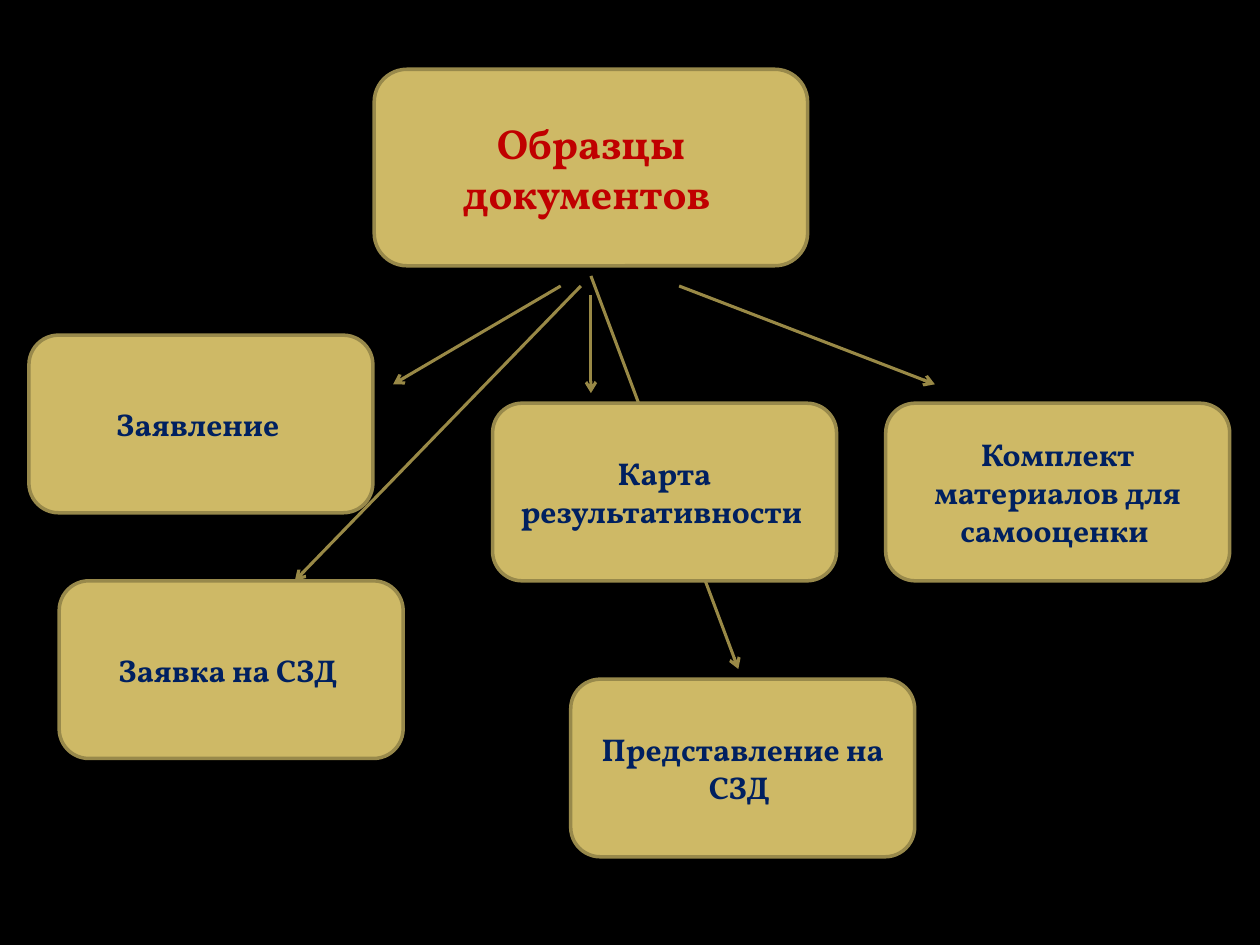
from lxml import etree
from pptx import Presentation
from pptx.dml.color import RGBColor
from pptx.enum.shapes import MSO_CONNECTOR, MSO_SHAPE
from pptx.enum.text import MSO_ANCHOR, PP_ALIGN
from pptx.oxml.ns import qn
from pptx.util import Inches, Pt

STRAIGHT = MSO_CONNECTOR.STRAIGHT
ROUNDED = MSO_SHAPE.ROUNDED_RECTANGLE
MIDDLE = MSO_ANCHOR.MIDDLE
CENTER = PP_ALIGN.CENTER

BLACK = RGBColor(0x00, 0x00, 0x00)
GOLD = RGBColor(0xCE, 0xB9, 0x66)
BORDER = RGBColor(0x98, 0x89, 0x4B)
ARROW = RGBColor(0x99, 0x89, 0x46)
RED = RGBColor(0xC0, 0x00, 0x00)
NAVY = RGBColor(0x00, 0x20, 0x60)

FONT = "Vollkorn"
DOCUMENT_SIZE = (2.73, 1.41)
DOCUMENTS = [
    ("Карта результативности ", 3.91, 3.2),
    ("Заявление ", 0.23, 2.66),
    ("Заявка на СЗД ", 0.47, 4.61),
    ("Представление на СЗД ", 4.53, 5.39),
    ("Комплект материалов для самооценки ", 7.03, 3.2),
]
ARROWS = [
    (4.69, 2.19, 5.86, 5.31),
    (4.61, 2.27, 2.34, 4.61),
    (4.45, 2.27, 3.12, 3.05),
    (4.69, 2.34, 4.69, 3.12),
    (5.39, 2.27, 7.42, 3.05),
]


def add_arrow(slide, ends):
    """Draw a straight arrow between two points given in inches."""
    arrow = slide.shapes.add_connector(STRAIGHT, *map(Inches, ends))
    arrow.line.color.rgb = ARROW
    arrow.line.width = Pt(1.75)
    etree.SubElement(arrow.line._get_or_add_ln(), qn("a:tailEnd"), type="arrow")
    etree.SubElement(arrow._element.spPr, qn("a:effectLst"))


def add_card(slide, box, caption, size, color):
    """Place a rounded card with a centred bold caption in the box."""
    card = slide.shapes.add_shape(ROUNDED, *map(Inches, box))
    card.shadow.inherit = False
    card.fill.solid()
    card.fill.fore_color.rgb = GOLD
    card.line.color.rgb = BORDER
    card.line.width = Pt(2)
    frame = card.text_frame
    frame.word_wrap = True
    frame.vertical_anchor = MIDDLE
    frame.text = caption
    paragraph = frame.paragraphs[0]
    paragraph.alignment = CENTER
    font = paragraph.runs[0].font
    font.name = FONT
    font.size = Pt(size)
    font.bold = True
    font.color.rgb = color


def build_document_map(slide):
    """Lay out the heading card, its arrows and the document cards."""
    slide.background.fill.solid()
    slide.background.fill.fore_color.rgb = BLACK
    for ends in ARROWS:
        add_arrow(slide, ends)
    add_card(slide, (2.97, 0.55, 3.44, 1.56), "Образцы документов ", 24, RED)
    for caption, left, top in DOCUMENTS:
        add_card(slide, (left, top, *DOCUMENT_SIZE), caption, 18, NAVY)


def main():
    """Build the presentation and save it."""
    deck = Presentation()
    deck.slide_width = Inches(10)
    deck.slide_height = Inches(7.5)
    build_document_map(deck.slides.add_slide(deck.slide_layouts[6]))
    deck.save("out.pptx")


if __name__ == "__main__":
    main()
